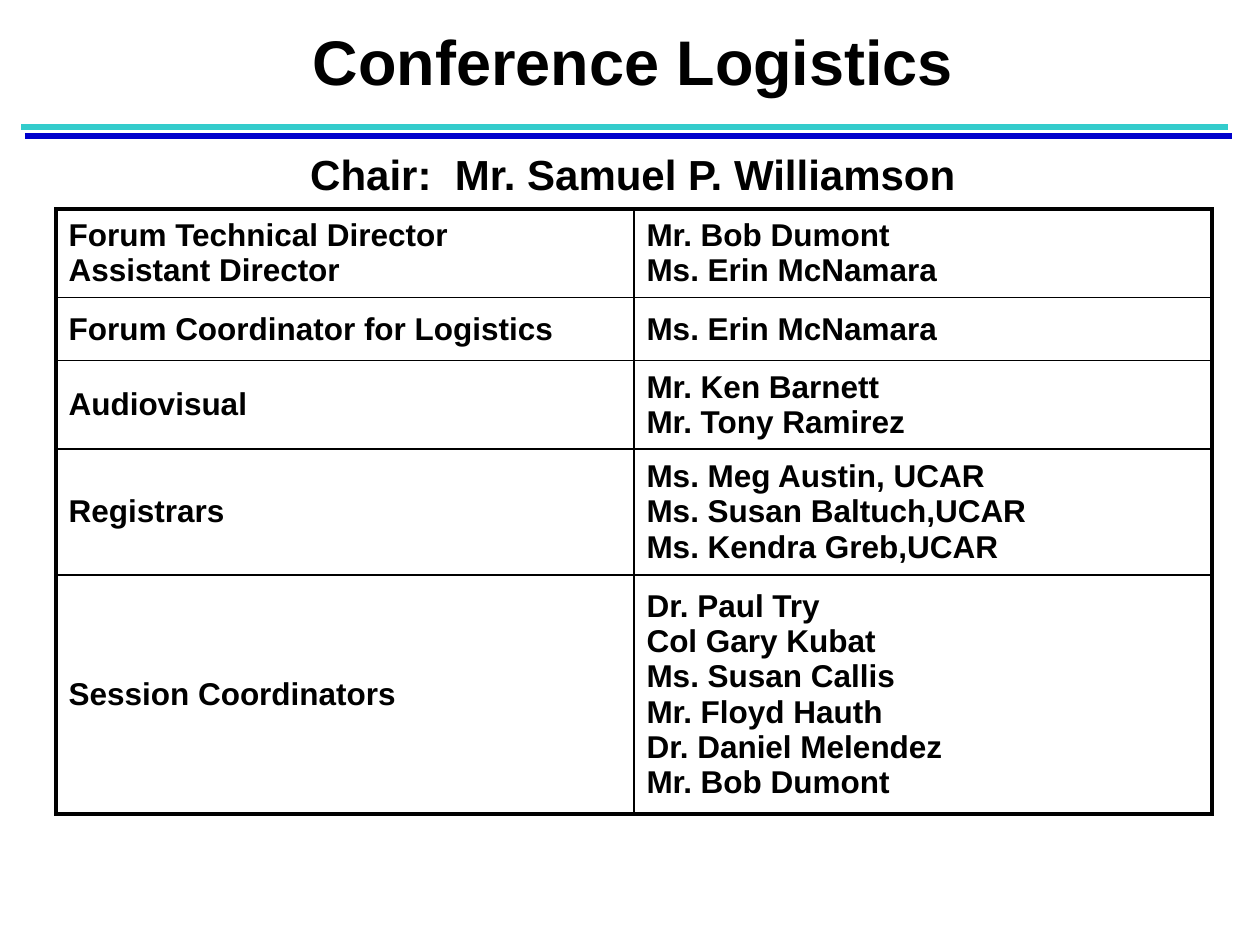
from lxml.etree import SubElement
from pptx import Presentation
from pptx.dml.color import RGBColor
from pptx.enum.shapes import MSO_CONNECTOR
from pptx.enum.text import MSO_ANCHOR, MSO_AUTO_SIZE, PP_ALIGN
from pptx.oxml.ns import qn
from pptx.util import Cm, Pt

COLORS = {"text": "000000", "teal": "33CCCC", "blue": "0000CC"}
THIN, THICK = 1, 2.25

STAFF = [
    (1.79, ["Forum Technical Director", "Assistant Director"],
     ["Mr. Bob Dumont", "Ms. Erin McNamara"]),
    (1.27, ["Forum Coordinator for Logistics"], ["Ms. Erin McNamara"]),
    (1.78, ["Audiovisual"], ["Mr. Ken Barnett", "Mr. Tony Ramirez"]),
    (2.54, ["Registrars"],
     ["Ms. Meg Austin, UCAR", "Ms. Susan Baltuch,UCAR", "Ms. Kendra Greb,UCAR"]),
    (4.82, ["Session Coordinators"],
     ["Dr. Paul Try", "Col Gary Kubat", "Ms. Susan Callis",
      "Mr. Floyd Hauth", "Dr. Daniel Melendez", "Mr. Bob Dumont"]),
]


def write(frame, lines, size, align=PP_ALIGN.LEFT, spacing=None):
    """Fill a text frame with one bold paragraph per line."""
    frame.word_wrap = True
    for i, line in enumerate(lines):
        paragraph = frame.paragraphs[0] if i == 0 else frame.add_paragraph()
        paragraph.alignment = align
        paragraph.line_spacing = spacing
        run = paragraph.add_run()
        run.text = line
        run.font.name = "Arial"
        run.font.size = Pt(size)
        run.font.bold = True
        run.font.color.rgb = RGBColor.from_string(COLORS["text"])


def add_borders(cell, widths):
    """Draw the left, right, top and bottom borders, widths in points."""
    properties = cell._tc.get_or_add_tcPr()
    for side, width in zip("LRTB", widths):
        border = SubElement(properties, qn(f"a:ln{side}"), w=str(Pt(width)))
        fill = SubElement(border, qn("a:solidFill"))
        SubElement(fill, qn("a:srgbClr"), val=COLORS["text"])


prs = Presentation()
prs.slide_width, prs.slide_height = Cm(25.4), Cm(19.05)
slide = prs.slides.add_slide(prs.slide_layouts[5])

title = slide.shapes.title
title.left, title.top, title.width, title.height = Cm(1.93), Cm(0.56), Cm(21.67), Cm(1.55)
title.text_frame.auto_size = MSO_AUTO_SIZE.NONE
title.text_frame.vertical_anchor = MSO_ANCHOR.MIDDLE
write(title.text_frame, ["Conference Logistics"], 36, PP_ALIGN.CENTER, 0.85)

# Double rule under the title
for color, left, top in [("blue", 0.5, 2.74), ("teal", 0.43, 2.56)]:
    rule = slide.shapes.add_connector(
        MSO_CONNECTOR.STRAIGHT, Cm(left), Cm(top), Cm(left + 24.33), Cm(top))
    rule.line.color.rgb = RGBColor.from_string(COLORS[color])
    rule.line.width = Pt(3)
    SubElement(rule._element.spPr, qn("a:effectLst"))

staff_table = slide.shapes.add_table(
    len(STAFF), 2, Cm(1.13), Cm(4.21), Cm(23.3), Cm(sum(row[0] for row in STAFF))).table
staff_table.first_row = False
staff_table.horz_banding = False
for column in staff_table.columns:
    column.width = Cm(11.65)

last_row = len(STAFF) - 1
for r, (height, *entries) in enumerate(STAFF):
    staff_table.rows[r].height = Cm(height)
    for c, lines in enumerate(entries):
        cell = staff_table.cell(r, c)
        cell.vertical_anchor = MSO_ANCHOR.MIDDLE
        write(cell.text_frame, lines, 18)
        on_edge = (c == 0, c == 1, r == 0, r == last_row)
        add_borders(cell, [THICK if edge else THIN for edge in on_edge])
        cell.fill.background()

chair = slide.shapes.add_textbox(Cm(2.84), Cm(2.87), Cm(19.84), Cm(1.3))
write(chair.text_frame, ["Chair:  Mr. Samuel P. Williamson"], 24, PP_ALIGN.CENTER)

prs.save("out.pptx")
